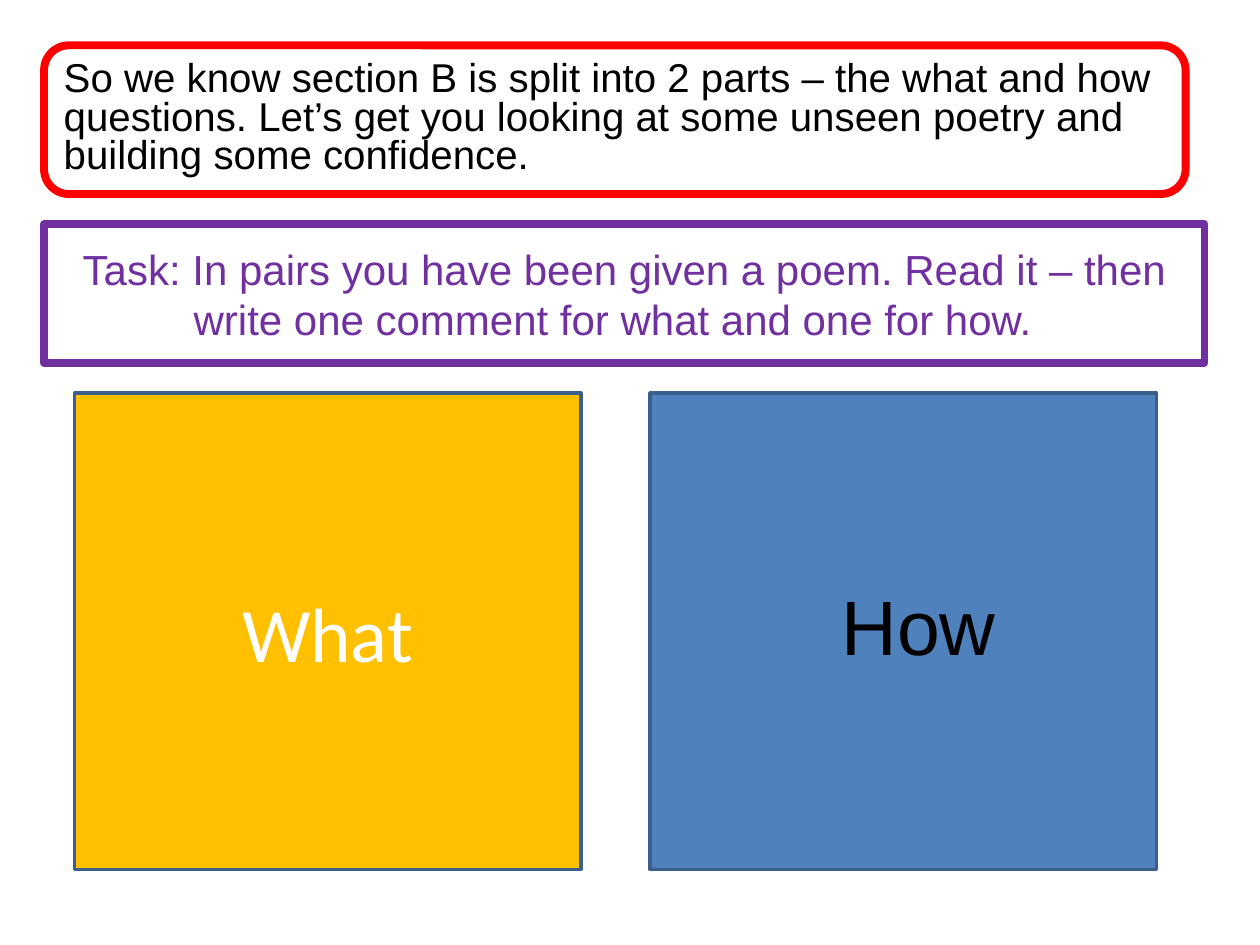
import pptx
import pptx.util
from pptx.dml.color import RGBColor
from pptx.enum.shapes import MSO_SHAPE
from pptx.enum.text import MSO_ANCHOR, MSO_AUTO_SIZE, PP_ALIGN
from pptx.oxml.ns import qn
import lxml.etree

BLACK = RGBColor(0x00, 0x00, 0x00)
WHITE = RGBColor(0xFF, 0xFF, 0xFF)
RED = RGBColor(0xFF, 0x00, 0x00)
PURPLE = RGBColor(0x70, 0x30, 0xA0)
GOLD = RGBColor(0xFF, 0xC0, 0x00)
BLUE = RGBColor(0x4F, 0x81, 0xBD)
NAVY = RGBColor(0x3A, 0x5F, 0x8C)

# Content
INTRO = ("So we know section B is split into 2 parts – the what and how questions. "
         "Let’s get you looking at some unseen poetry and building some confidence.")
TASK = ("Task: In pairs you have been given a poem. Read it – then write one "
        "comment for what and one for how.  ")
QUESTIONS = ["What", "How"]
PANEL_FILLS = [GOLD, BLUE]

# Layout in inches
BANNER_LEFT = 0.35
PANEL_LEFT, PANEL_TOP, PANEL_WIDTH, PANEL_HEIGHT = 0.59, 3.12, 4.02, 3.78
PANEL_GAP = 0.55

deck = pptx.Presentation()
deck.slide_width, deck.slide_height = pptx.util.Inches(10), pptx.util.Inches(7.5)
page = deck.slides.add_slide(deck.slide_layouts[6])


def add_box(kind, area, fill, line, width, opacity=100):
    box = page.shapes.add_shape(kind, *map(pptx.util.Inches, area))
    box.shadow.inherit = False
    box.fill.solid()
    box.fill.fore_color.rgb = fill
    box.line.color.rgb = line
    box.line.width = pptx.util.Pt(width)
    if opacity < 100:
        color = box._element.spPr.find(qn("a:solidFill")).find(qn("a:srgbClr"))
        lxml.etree.SubElement(color, qn("a:alpha")).set("val", str(opacity * 1000))
    return box


def write(box, text, size, color, font="Arial", align=PP_ALIGN.CENTER,
          anchor=MSO_ANCHOR.MIDDLE, spacing=None, wrap=True):
    frame = box.text_frame
    frame.word_wrap = wrap
    frame.vertical_anchor = anchor
    para = frame.paragraphs[0]
    para.alignment = align
    if spacing:
        para.line_spacing = spacing
    span = para.add_run()
    span.text = text
    span.font.size = pptx.util.Pt(size)
    span.font.name = font
    span.font.color.rgb = color


# Banners
intro = add_box(MSO_SHAPE.ROUNDED_RECTANGLE, (BANNER_LEFT, 0.36, 9.06, 1.18),
                WHITE, RED, 4.5, opacity=71)
write(intro, INTRO, 23, BLACK, align=PP_ALIGN.LEFT, spacing=0.8)
task = add_box(MSO_SHAPE.RECTANGLE, (BANNER_LEFT, 1.78, 9.21, 1.1),
               WHITE, PURPLE, 4.5, opacity=70)
write(task, TASK, 24, PURPLE)

# Question panels
panels = [add_box(MSO_SHAPE.RECTANGLE,
                  (PANEL_LEFT + column * (PANEL_WIDTH + PANEL_GAP), PANEL_TOP,
                   PANEL_WIDTH, PANEL_HEIGHT), fill, NAVY, 2)
          for column, fill in enumerate(PANEL_FILLS)]
write(panels[0], QUESTIONS[0], 44, WHITE, font="Calibri")

# Label laid over the second panel
label = page.shapes.add_textbox(*map(pptx.util.Inches, (6.57, 4.54, 1.44, 0.84)))
write(label, QUESTIONS[1], 44, BLACK, anchor=MSO_ANCHOR.TOP, wrap=False)
label.text_frame.auto_size = MSO_AUTO_SIZE.SHAPE_TO_FIT_TEXT

deck.save("out.pptx")
